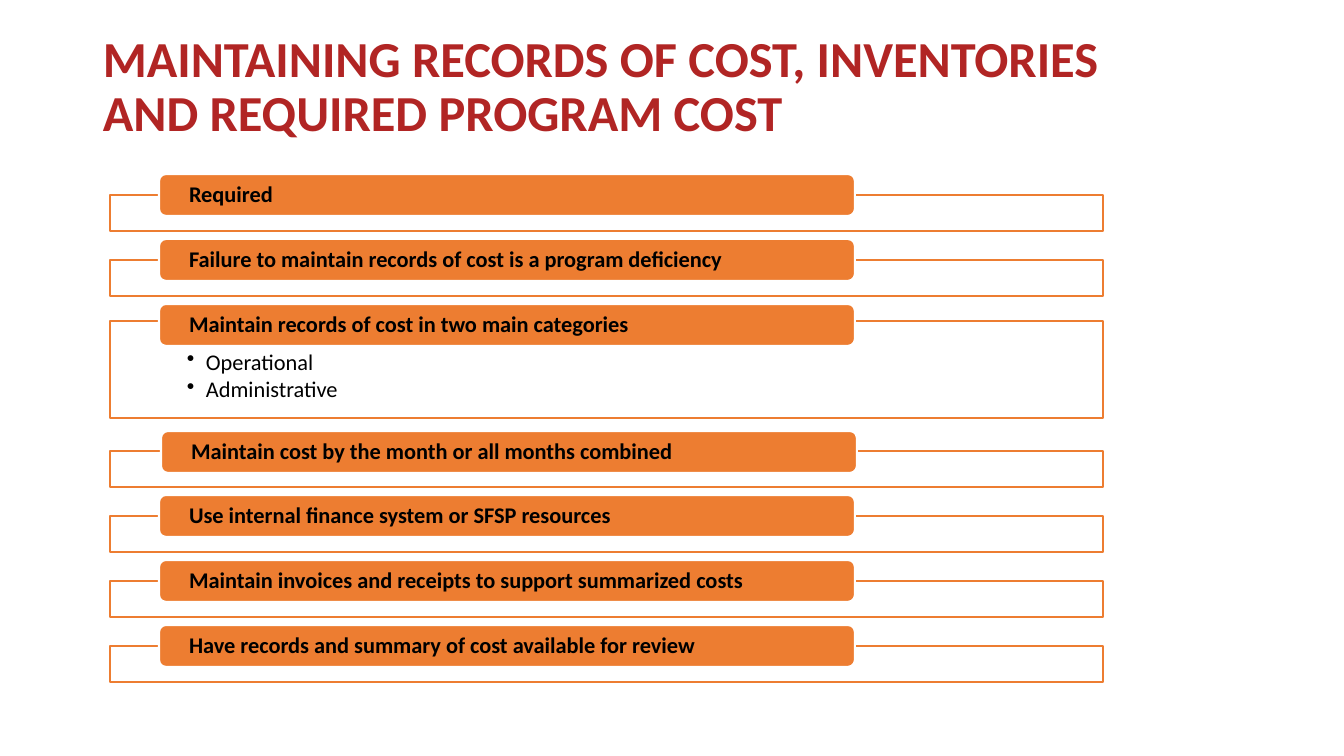
from lxml.etree import SubElement
from pptx import Presentation
from pptx.dml.color import RGBColor
from pptx.enum.shapes import MSO_SHAPE
from pptx.enum.text import MSO_ANCHOR, PP_ALIGN
from pptx.oxml.ns import qn
from pptx.util import Emu, Pt

SCALE = 914400 / 100.8  # EMU per px
ORANGE, WHITE, BLACK, RED = "ED7D31", "FFFFFF", "000000", "B12524"


def px(*lengths):
    return [Emu(round(length * SCALE)) for length in lengths]


def color(target, value):
    target.rgb = RGBColor.from_string(value)


deck = Presentation()
deck.slide_width, deck.slide_height = px(1344, 756)
page = deck.slides.add_slide(deck.slide_layouts[6])

# Title
title = page.shapes.add_textbox(*px(93, 29, 1035, 155))
frame = title.text_frame
frame.word_wrap = True
frame.vertical_anchor = MSO_ANCHOR.TOP
para = frame.paragraphs[0]
para.line_spacing = 0.9
for number, line in enumerate(["MAINTAINING RECORDS OF COST, INVENTORIES",
                               "AND REQUIRED PROGRAM COST"]):
    if number:
        para.add_line_break()
    span = para.add_run()
    span.text = line
    span.font.name, span.font.size, span.font.bold = "Calibri", Pt(36), True
    color(span.font.color, RED)

# Rows: heading, bar left, bar top, outline top, outline height, bullets
rows = [
    ("Required", 159, 174, 195, 36, []),
    ("Failure to maintain records of cost is a program deficiency", 159, 239, 260, 36, []),
    ("Maintain records of cost in two main categories", 159, 304, 321, 97,
     ["Operational", "Administrative"]),
    ("Maintain cost by the month or all months combined", 161, 431, 451, 36, []),
    ("Use internal finance system or SFSP resources", 159, 495, 516, 36, []),
    ("Maintain invoices and receipts to support summarized costs", 159, 560, 581, 36, []),
    ("Have records and summary of cost available for review", 159, 625, 646, 36, []),
]

for heading, bar_left, bar_top, outline_top, outline_height, bullets in rows:
    outline = page.shapes.add_shape(MSO_SHAPE.RECTANGLE,
                                    *px(110, outline_top, 993, outline_height))
    bar = page.shapes.add_shape(MSO_SHAPE.ROUNDED_RECTANGLE, *px(bar_left, bar_top, 696, 42))

    parts = [
        (outline, WHITE, ORANGE, 1, bullets, (77, 30, 77, 12), MSO_ANCHOR.TOP),
        (bar, ORANGE, WHITE, 1.5, [heading], (28, 0, 28, 0), MSO_ANCHOR.MIDDLE),
    ]
    for box, fill, line, width, texts, insets, anchor in parts:
        box.shadow.inherit = False
        box.fill.solid()
        color(box.fill.fore_color, fill)
        color(box.line.color, line)
        box.line.width = Pt(width)
        frame = box.text_frame
        frame.word_wrap = True
        frame.vertical_anchor = anchor
        (frame.margin_left, frame.margin_top,
         frame.margin_right, frame.margin_bottom) = px(*insets)
        for number, text in enumerate(texts):
            para = frame.add_paragraph() if number else frame.paragraphs[0]
            para.alignment = PP_ALIGN.LEFT
            para.line_spacing = 0.9
            if box is outline:
                para.space_after = Pt(2.4)
                properties = para._p.get_or_add_pPr()
                indent = px(19)[0]
                properties.set("marL", str(indent))
                properties.set("indent", str(-indent))
                SubElement(properties, qn("a:buChar")).set("char", "•")
            span = para.add_run()
            span.text = text
            span.font.name, span.font.size = "Calibri", Pt(16)
            span.font.bold = box is bar
            color(span.font.color, BLACK)

    # Slightly transparent outline fill
    shade = outline.fill._xPr.find(qn("a:solidFill"))[0]
    SubElement(shade, qn("a:alpha")).set("val", "90000")

deck.save("out.pptx")
